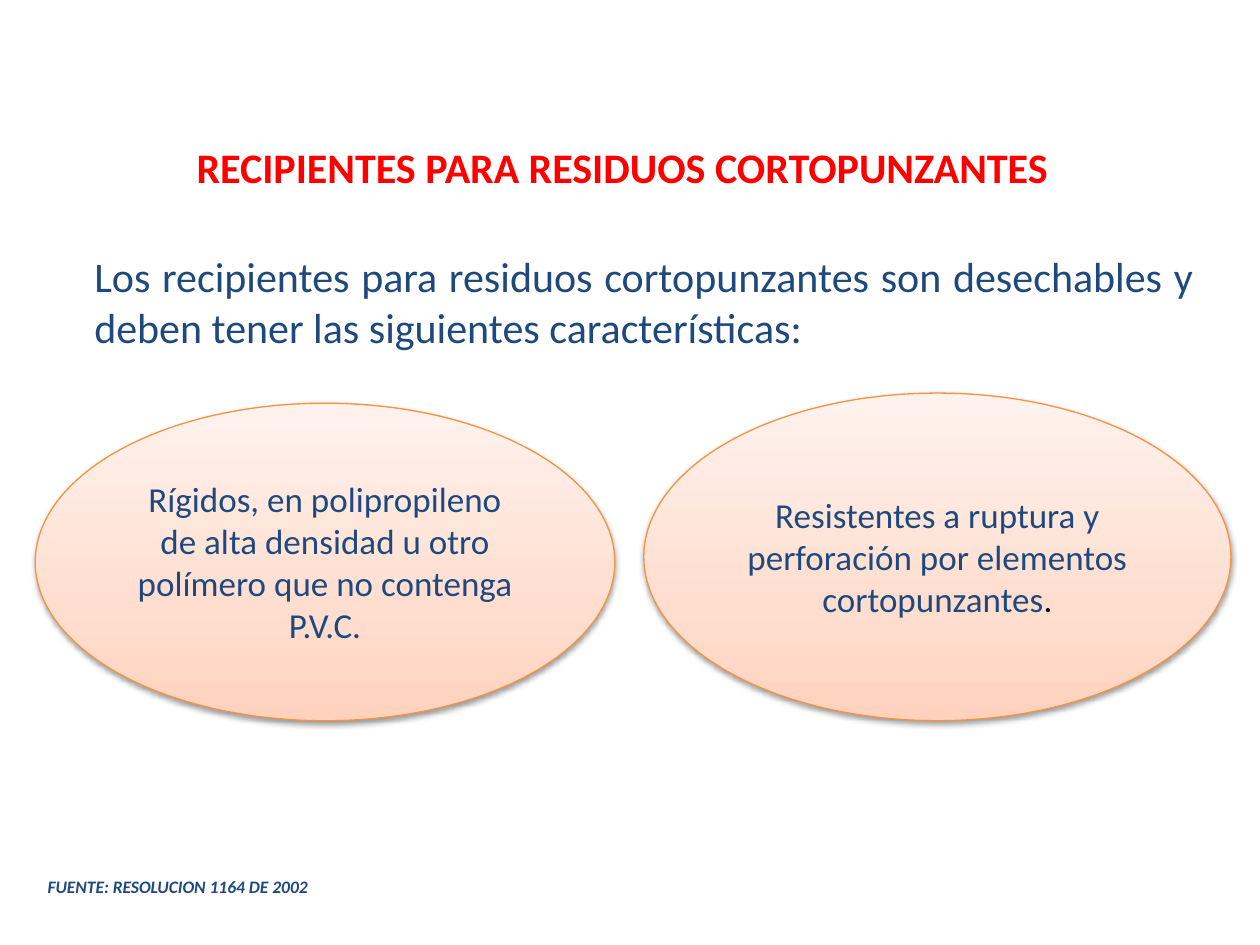
import copy
import pptx
import pptx.dml.color
import pptx.enum.shapes
import pptx.enum.text
import pptx.oxml
import pptx.oxml.ns
import pptx.util

Inches = pptx.util.Inches
Pt = pptx.util.Pt
Align = pptx.enum.text.PP_ALIGN
Anchor = pptx.enum.text.MSO_ANCHOR
AutoSize = pptx.enum.text.MSO_AUTO_SIZE
rgb = pptx.dml.color.RGBColor.from_string

THEME = {
    "font": "Calibri",
    "title": "FF0000",
    "body": "1F497D",
    "stop": "000000",
    "outline": "F69240",
    "gradient": [(0, "FFD2BD"), (0.35, "FFDED0"), (1, "FFF2ED")],
    "heading_size": 24,
    "feature_size": 20,
    "source_size": 10,
}

TITLE = "RECIPIENTES PARA RESIDUOS CORTOPUNZANTES"
INTRO = ("Los recipientes para residuos cortopunzantes son desechables "
         "y deben tener las siguientes características:")
SOURCE = "FUENTE: RESOLUCION 1164 DE 2002"
FEATURES = [
    ((0.28, 3.2, 4.6, 2.52),
     [("Rígidos, en polipropileno de alta densidad u otro polímero "
       "que no contenga P.V.C.", "body")]),
    ((5.11, 3.12, 4.66, 2.6),
     [("Resistentes a ruptura y perforación por elementos cortopunzantes", "body"),
      (".", "stop")]),
]
SHADOW = (
    '<a:outerShdw xmlns:a="http://schemas.openxmlformats.org/drawingml/2006/main" '
    'blurRad="40000" dist="20000" dir="5400000" rotWithShape="0">'
    '<a:srgbClr val="000000"><a:alpha val="38000"/></a:srgbClr></a:outerShdw>'
)


def format_run(run, size, color, bold=False, italic=False):
    run.font.name = THEME["font"]
    run.font.size = Pt(THEME[size])
    run.font.bold = bold
    run.font.italic = italic
    run.font.color.rgb = rgb(THEME[color])


def write_text(holder, text, align, size, color, wrap=True, **style):
    frame = holder.text_frame
    frame.text = text
    frame.word_wrap = wrap
    frame.auto_size = AutoSize.SHAPE_TO_FIT_TEXT
    frame.vertical_anchor = Anchor.TOP
    frame.paragraphs[0].alignment = align
    format_run(frame.paragraphs[0].runs[0], size, color, **style)


def paint_feature(oval):
    oval.fill.gradient()
    oval.fill.gradient_angle = 90
    stop_list = oval._element.spPr.find(".//" + pptx.oxml.ns.qn("a:gsLst"))
    stop_list.append(copy.deepcopy(stop_list[-1]))
    for stop, (position, color) in zip(oval.fill.gradient_stops, THEME["gradient"]):
        stop.position = position
        stop.color.rgb = rgb(color)
    oval.line.color.rgb = rgb(THEME["outline"])
    oval.line.width = Pt(0.75)
    oval.shadow.inherit = False
    effects = oval._element.spPr.find(pptx.oxml.ns.qn("a:effectLst"))
    effects.append(pptx.oxml.parse_xml(SHADOW))


def add_feature(slide, box, parts):
    oval = slide.shapes.add_shape(
        pptx.enum.shapes.MSO_SHAPE.OVAL, *map(Inches, box))
    paint_feature(oval)
    frame = oval.text_frame
    frame.word_wrap = True
    frame.vertical_anchor = Anchor.MIDDLE
    paragraph = frame.paragraphs[0]
    paragraph.alignment = Align.CENTER
    for text, color in parts:
        run = paragraph.add_run()
        run.text = text
        format_run(run, "feature_size", color)


def main():
    deck = pptx.Presentation()
    deck.slide_width, deck.slide_height = Inches(10), Inches(7.5)
    slide = deck.slides.add_slide(deck.slide_layouts.get_by_name("Title Only"))

    title = slide.shapes.title
    title.left, title.top, title.width, title.height = map(
        Inches, (1.46, 1.07, 7.02, 0.5))
    write_text(title, TITLE, Align.LEFT, "heading_size", "title",
               wrap=False, bold=True)

    intro = slide.shapes.add_textbox(*map(Inches, (0.65, 1.94, 8.92, 0.91)))
    write_text(intro, INTRO, Align.JUSTIFY, "heading_size", "body")

    for box, parts in FEATURES:
        add_feature(slide, box, parts)

    source = slide.shapes.add_textbox(*map(Inches, (0.28, 6.9, 5, 0.27)))
    write_text(source, SOURCE, Align.LEFT, "source_size", "body",
               bold=True, italic=True)

    deck.save("out.pptx")


if __name__ == "__main__":
    main()
